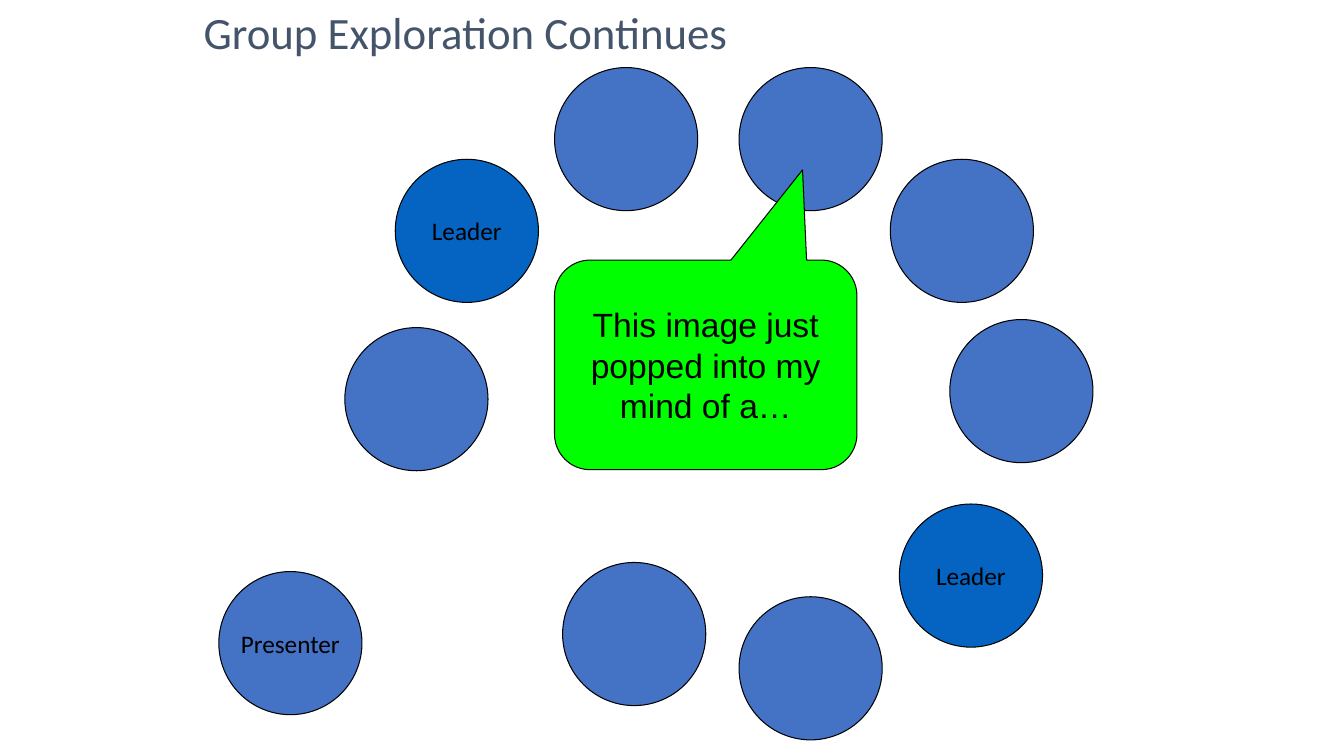
"""Build a slide showing a group circle with a member speaking."""
from dataclasses import dataclass

from pptx import Presentation
from pptx.dml.color import RGBColor
from pptx.enum.shapes import MSO_SHAPE
from pptx.enum.text import MSO_ANCHOR, MSO_AUTO_SIZE, PP_ALIGN
from pptx.shapes.autoshape import Shape
from pptx.slide import Slide
from pptx.text.text import TextFrame
from pptx.util import Inches, Pt

BLACK = "000000"
MEMBER_BLUE = "4472C4"
LEADER_BLUE = "0563C1"
SPEECH_GREEN = "00FF00"
TITLE_SLATE = "44546A"
DIAMETER = 1.42


@dataclass(frozen=True)
class Participant:
    left: float
    top: float
    role: str = ""
    fill: str = MEMBER_BLUE


PARTICIPANTS = [
    Participant(3.92, 1.58, "Leader", LEADER_BLUE),
    Participant(5.5, 0.67),
    Participant(8.92, 5, "Leader", LEADER_BLUE),
    Participant(2.17, 5.67, "Presenter"),
    Participant(5.58, 5.58),
    Participant(7.33, 5.92),
    Participant(7.33, 0.67),
    Participant(8.83, 1.58),
    Participant(3.42, 3.25),
    Participant(9.42, 3.17),
]


def color(value: str) -> RGBColor:
    return RGBColor.from_string(value)


def write_text(frame: TextFrame, text: str, *, size: float, font: str = "Calibri",
               fill: str = BLACK, align: PP_ALIGN = PP_ALIGN.CENTER,
               anchor: MSO_ANCHOR = MSO_ANCHOR.MIDDLE, wrap: bool = True) -> None:
    frame.word_wrap = wrap
    frame.vertical_anchor = anchor
    paragraph = frame.paragraphs[0]
    paragraph.alignment = align
    run = paragraph.add_run()
    run.text = text
    run.font.name = font
    run.font.size = Pt(size)
    run.font.color.rgb = color(fill)


def add_outlined_shape(slide: Slide, kind: MSO_SHAPE, left: float, top: float,
                       width: float, height: float, fill: str) -> Shape:
    shape = slide.shapes.add_shape(
        kind, Inches(left), Inches(top), Inches(width), Inches(height))
    shape.shadow.inherit = False
    shape.fill.solid()
    shape.fill.fore_color.rgb = color(fill)
    shape.line.color.rgb = color(BLACK)
    shape.line.width = Pt(0.75)
    return shape


def add_title(slide: Slide, text: str) -> None:
    title = slide.shapes.title
    title.left, title.top = Inches(1.92), Inches(0)
    title.width, title.height = Inches(8.83), Inches(0.64)
    write_text(title.text_frame, text, size=32, fill=TITLE_SLATE,
               align=PP_ALIGN.LEFT, anchor=MSO_ANCHOR.TOP)
    title.text_frame.auto_size = MSO_AUTO_SIZE.NONE


def add_participant(slide: Slide, participant: Participant) -> None:
    circle = add_outlined_shape(slide, MSO_SHAPE.OVAL, participant.left, participant.top,
                                DIAMETER, DIAMETER, participant.fill)
    if participant.role:
        write_text(circle.text_frame, participant.role, size=18, wrap=False)


def add_speech(slide: Slide, text: str) -> None:
    callout = add_outlined_shape(slide, MSO_SHAPE.ROUNDED_RECTANGULAR_CALLOUT,
                                 5.5, 2.58, 3, 2.08, SPEECH_GREEN)
    for index, value in enumerate((0.32, -0.93, 0.17)):
        callout.adjustments[index] = value
    write_text(callout.text_frame, text, size=24, font="Arial")


def main() -> None:
    presentation = Presentation()
    presentation.slide_width = Inches(13.33)
    presentation.slide_height = Inches(7.5)
    title_only = presentation.slide_layouts.get_by_name("Title Only")
    slide = presentation.slides.add_slide(title_only)
    add_title(slide, "Group Exploration Continues")
    for participant in PARTICIPANTS:
        add_participant(slide, participant)
    add_speech(slide, "This image just popped into my mind of a…")
    presentation.save("out.pptx")


if __name__ == "__main__":
    main()
